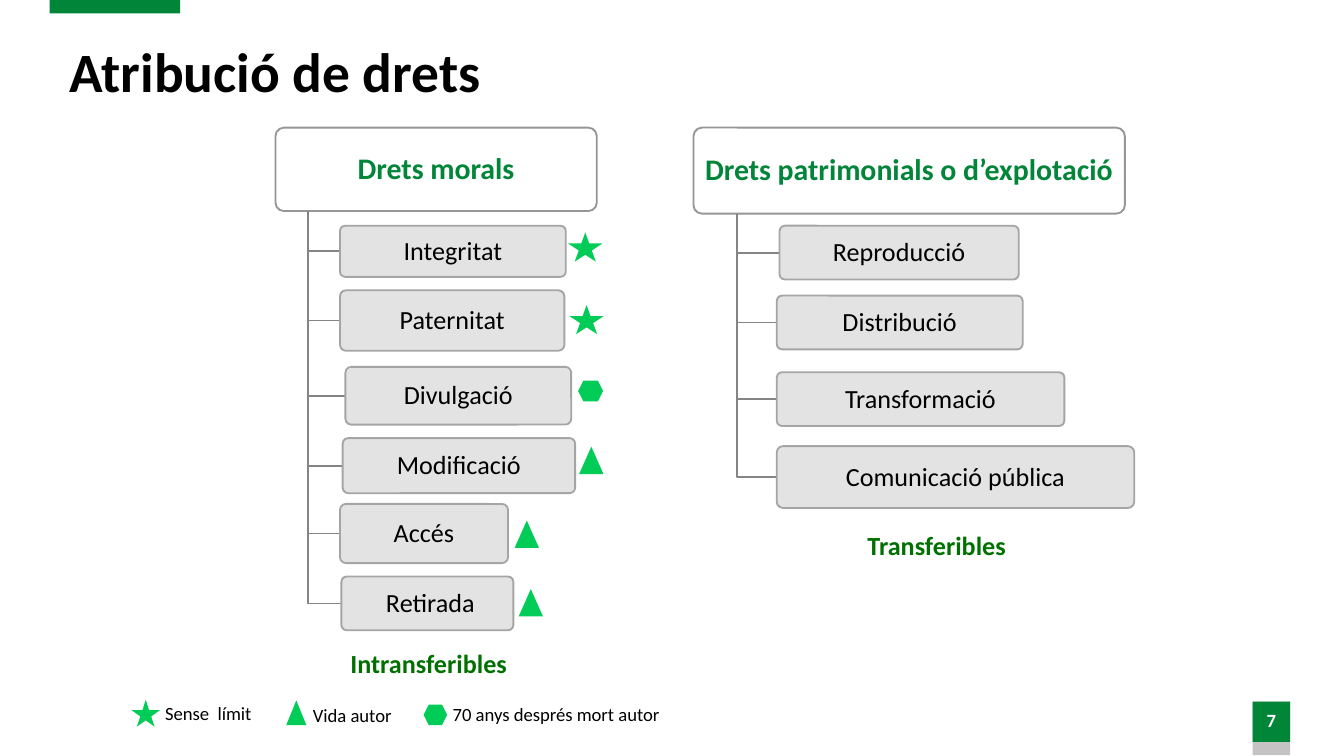
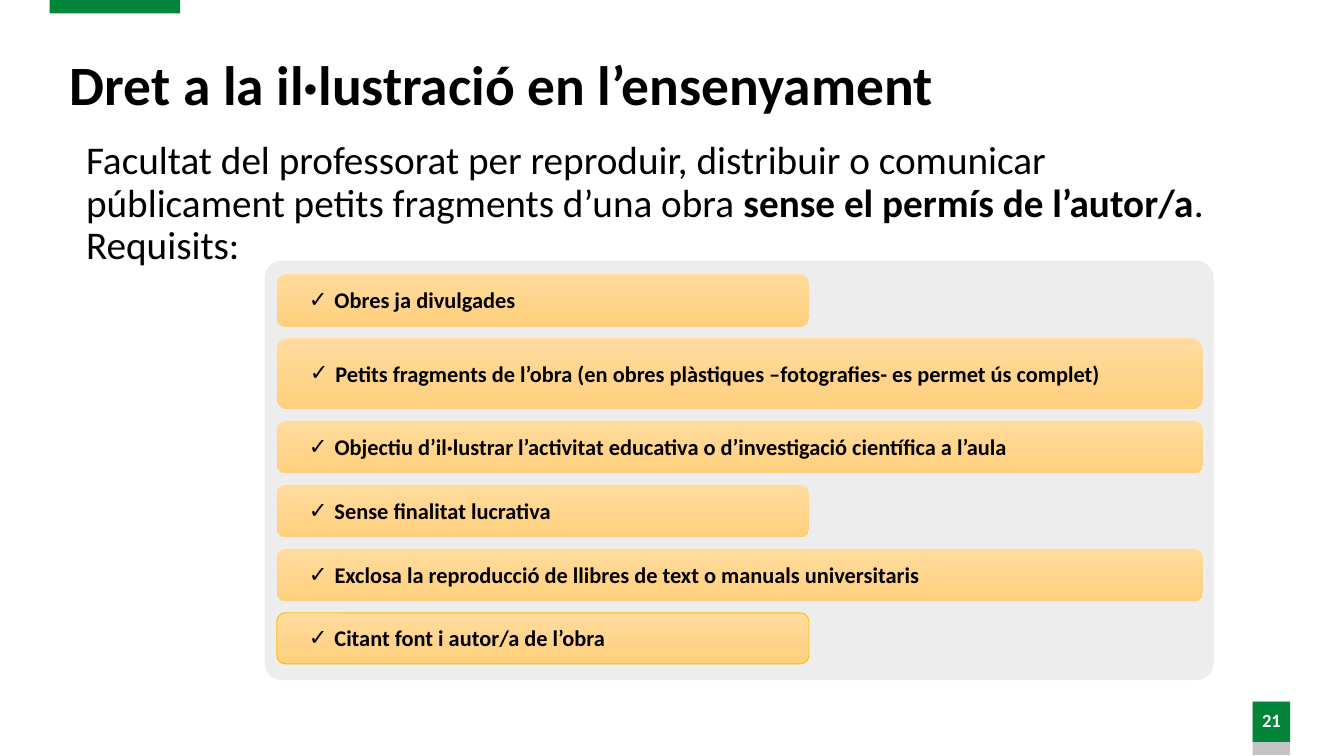
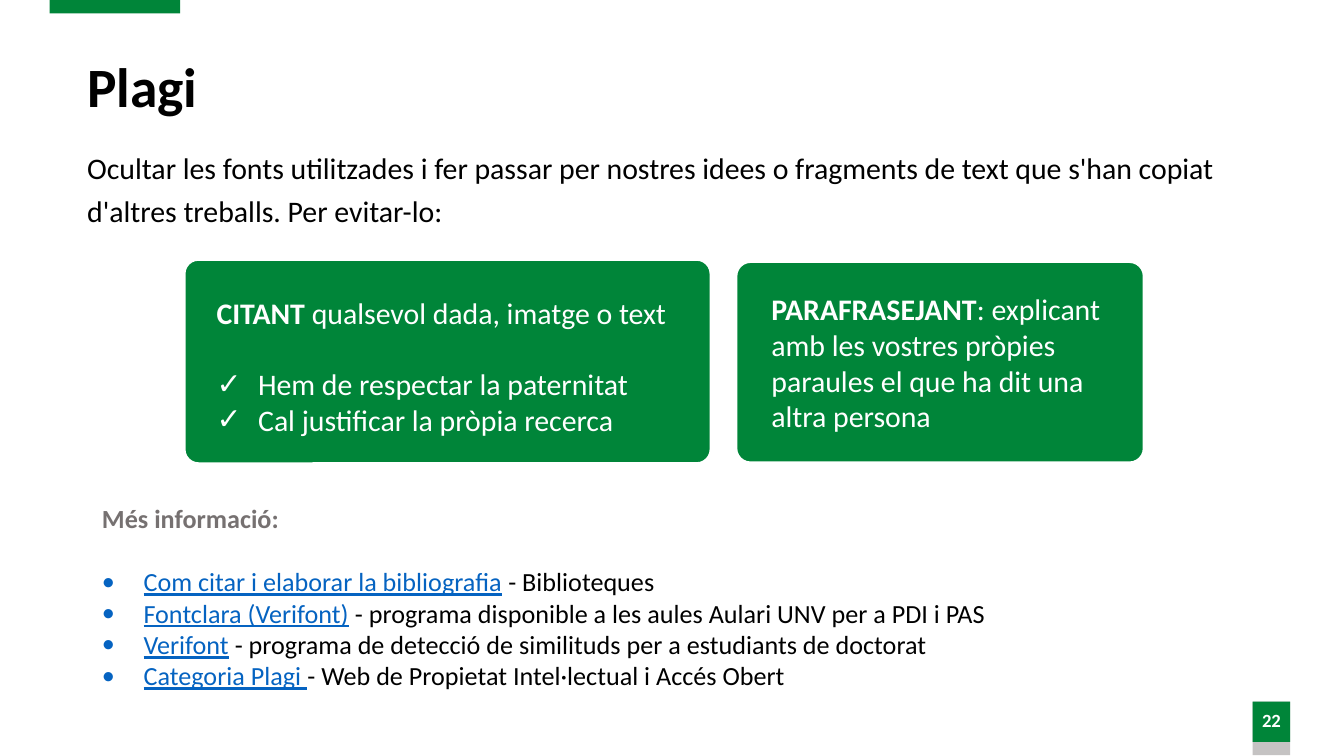
from typing import NamedTuple

from lxml.etree import SubElement
from pptx import Presentation
from pptx.dml.color import RGBColor
from pptx.enum.shapes import MSO_SHAPE as SHAPE
from pptx.enum.text import MSO_ANCHOR as ANCHOR, PP_ALIGN as ALIGN
from pptx.oxml.ns import qn
from pptx.util import Inches, Pt

FONT = "Calibri"
COLORS = {
    "green": "008539", "mark": "00CC57", "label": "007100", "band": "C5C3C3",
    "white": "FFFFFF", "black": "000000", "node": "E1E1E1", "node_line": "A5A5A5",
    "header_line": "969696", "branch": "848484", "panel": "EDEDED",
    "bar_top": "FFDB9E", "bar_bottom": "FFD07C", "bar_line": "FFC000",
    "muted": "767171", "link": "0563C1",
}
MARK_SIZES = {SHAPE.STAR_5_POINT: (0.21, 0.18), SHAPE.HEXAGON: (0.17, 0.14),
              SHAPE.ISOSCELES_TRIANGLE: (0.16, 0.18)}
STAR, HEXAGON, TRIANGLE = MARK_SIZES


class Box(NamedTuple):
    left: float
    top: float
    width: float
    height: float

    def emu(self):
        return [Inches(value) for value in self]

    def inner(self, dx, dy, width, height):
        return Box(self.left + dx, self.top + dy, width, height)


def rgb(name):
    return RGBColor.from_string(COLORS[name])


# Shared drawing helpers
def set_line(shape, color, width):
    if color:
        shape.line.color.rgb = rgb(color)
        shape.line.width = Pt(width)
    else:
        shape.line.fill.background()


def add_block(slide, kind, box, fill, line=None, line_width=1, radius=None):
    block = slide.shapes.add_shape(kind, *box.emu())
    block.shadow.inherit = False
    block.fill.solid()
    block.fill.fore_color.rgb = rgb(fill)
    set_line(block, line, line_width)
    if radius is not None:
        block.adjustments[0] = radius
    return block


def setup_frame(shape, anchor, margins=(0.1, 0.05, 0.1, 0.05)):
    frame = shape.text_frame
    frame.word_wrap = True
    frame.vertical_anchor = anchor
    (frame.margin_left, frame.margin_top,
     frame.margin_right, frame.margin_bottom) = [Inches(m) for m in margins]
    return frame


def write(paragraph, parts, size, color="black", bold=False, align=ALIGN.LEFT, spacing=None):
    """Parts is a string, or (text, style) pairs with bold, color or underline."""
    if isinstance(parts, str):
        parts = [(parts, {})]
    paragraph.alignment = align
    if spacing:
        paragraph.line_spacing = spacing
    for text, style in parts:
        run = paragraph.add_run()
        run.text = text
        run.font.name = FONT
        run.font.size = Pt(size)
        run.font.bold = style.get("bold", bold)
        run.font.underline = style.get("underline", False)
        run.font.color.rgb = rgb(style.get("color", color))


def add_bullet(paragraph, char, indent):
    properties = paragraph._p.get_or_add_pPr()
    properties.set("marL", str(Inches(indent)))
    properties.set("indent", str(-Inches(indent)))
    SubElement(properties, qn("a:buFont")).set("typeface", FONT)
    SubElement(properties, qn("a:buChar")).set("char", char)


def add_text(slide, box, parts, size, anchor=ANCHOR.TOP, **style):
    frame = setup_frame(slide.shapes.add_textbox(*box.emu()), anchor)
    write(frame.paragraphs[0], parts, size, **style)
    return frame


def add_mark(slide, kind, box):
    mark = add_block(slide, kind, box, "mark", "mark")
    SubElement(mark.line._get_or_add_ln(), qn("a:miter")).set("lim", "800000")


def start_slide(prs, title, title_box, number):
    slide = prs.slides.add_slide(prs.slide_layouts[6])
    # Top band and page number
    add_block(slide, SHAPE.RECTANGLE, Box(0.37, 0, 0.97, 0.1), "green")
    add_block(slide, SHAPE.RECTANGLE, Box(9.32, 5.22, 0.28, 0.4), "band")
    page = add_block(slide, SHAPE.RECTANGLE, Box(9.32, 5.22, 0.28, 0.3), "green")
    frame = setup_frame(page, ANCHOR.MIDDLE, (0, 0.04, 0, 0.04))
    write(frame.paragraphs[0], str(number), 10, "white", True, ALIGN.CENTER, 0.9)
    # Title
    add_text(slide, title_box, title, 29.7, ANCHOR.MIDDLE, bold=True, spacing=0.9)
    return slide


# Rights attribution
def add_tree_box(slide, box, text, size, fill, line, color="black", bold=False):
    block = add_block(slide, SHAPE.ROUNDED_RECTANGLE, box, fill, line, radius=0.1)
    frame = setup_frame(block, ANCHOR.MIDDLE, (0.04, 0.04, 0.04, 0.03))
    write(frame.paragraphs[0], text, size, color, bold, ALIGN.CENTER, 0.9)
    return block


def add_branch(slide, header, node):
    trunk = Inches(header.left + header.width / 10)
    middle = Inches(node.top + node.height / 2)
    builder = slide.shapes.build_freeform(trunk, Inches(header.top + header.height))
    builder.add_line_segments([(trunk, middle), (Inches(node.left), middle)], close=False)
    branch = builder.convert_to_shape()
    branch.shadow.inherit = False
    branch.fill.background()
    set_line(branch, "branch", 1)


def add_rights_tree(slide, header, heading, rights):
    add_tree_box(slide, header, heading, 16, "white", "header_line", "green", True)
    for right, offsets in rights:
        node = header.inner(*offsets)
        add_branch(slide, header, node)
        block = add_tree_box(slide, node, right, 14, "node", "node_line")
        color = block.fill._xPr.find(qn("a:solidFill"))[0]
        SubElement(color, qn("a:alpha")).set("val", "90000")


def add_duration_marks(slide, header, marks):
    for kind, dx, dy in marks:
        add_mark(slide, kind, header.inner(dx, dy, *MARK_SIZES[kind]))


def add_tree_label(slide, box, text):
    block = add_block(slide, SHAPE.ROUNDED_RECTANGLE, box, "white")
    frame = setup_frame(block, ANCHOR.MIDDLE)
    write(frame.paragraphs[0], text, 14, "label", True, ALIGN.CENTER)


def add_legend(slide, box):
    entries = [
        (STAR, (0, 0.06, 0.17, 0.16), "Sense  límit", (0.13, 0, 0.96, 0.28)),
        (TRIANGLE, (1.14, 0.06, 0.13, 0.16), "Vida autor", (1.23, 0.02, 0.96, 0.28)),
        (HEXAGON, (2.16, 0.08, 0.16, 0.14), "70 anys després mort autor",
         (2.27, 0.01, 2.14, 0.28)),
    ]
    for mark, mark_offsets, meaning, text_offsets in entries:
        add_mark(slide, mark, box.inner(*mark_offsets))
        add_text(slide, box.inner(*text_offsets), meaning, 10)


def rights_slide(prs):
    slide = start_slide(prs, "Atribució de drets", Box(0.42, 0.27, 9.11, 0.57), 7)
    moral = Box(2.05, 0.95, 2.39, 0.62)
    add_rights_tree(slide, moral, "Drets morals", [
        ("Integritat", (0.48, 0.73, 1.68, 0.38)),
        ("Paternitat", (0.48, 1.21, 1.67, 0.45)),
        ("Divulgació", (0.52, 1.78, 1.68, 0.43)),
        ("Modificació", (0.5, 2.31, 1.73, 0.41)),
        ("Accés", (0.48, 2.8, 1.25, 0.44)),
        (" Retirada", (0.49, 3.34, 1.28, 0.4)),
    ])
    add_rights_tree(slide, Box(5.16, 0.95, 3.21, 0.64), "Drets patrimonials o d’explotació", [
        ("Reproducció", (0.64, 0.73, 1.78, 0.4)),
        ("Distribució", (0.62, 1.25, 1.83, 0.4)),
        ("Transformació", (0.62, 1.82, 2.14, 0.4)),
        ("Comunicació pública", (0.62, 2.37, 2.66, 0.46)),
    ])
    add_duration_marks(slide, moral, [
        (STAR, 2.2, 0.8), (STAR, 2.21, 1.34), (HEXAGON, 2.26, 1.89),
        (TRIANGLE, 2.27, 2.39), (TRIANGLE, 1.79, 2.94), (TRIANGLE, 1.82, 3.45),
    ])
    add_tree_label(slide, Box(0.95, 4.76, 4.48, 0.35), "Intransferibles")
    add_legend(slide, Box(1, 5.17, 4.41, 0.3))
    add_tree_label(slide, Box(5.94, 3.89, 2.06, 0.33), "Transferibles")


# Teaching exception
def add_requirements(slide, panel, requirements):
    add_block(slide, SHAPE.ROUNDED_RECTANGLE, panel, "panel", radius=0.04)
    short, wide, pad_top, pad_bottom = 3.96, 6.89, 0.1, 0.12
    heights = [height for _, _, height in requirements]
    last = len(requirements) - 1
    gap = (panel.height - pad_top - pad_bottom - sum(heights)) / last
    dy = pad_top
    for index, (requirement, is_wide, height) in enumerate(requirements):
        bar_box = panel.inner(0.09, dy, wide if is_wide else short, height)
        bar = add_block(slide, SHAPE.ROUNDED_RECTANGLE, bar_box,
                        "bar_top", "bar_line" if index == last else None, 0.5)
        bar.fill.gradient()
        bar.fill.gradient_angle = 270
        for stop, color in zip(bar.fill.gradient_stops, ("bar_top", "bar_bottom")):
            stop.color.rgb = rgb(color)
        frame = setup_frame(bar, ANCHOR.MIDDLE, (0.22, 0.04, 0.15, 0.05))
        write(frame.paragraphs[0], requirement, 12, bold=True)
        add_bullet(frame.paragraphs[0], "✓", 0.19)
        dy += height + gap


def teaching_slide(prs):
    slide = start_slide(prs, "Dret a la il·lustració en l’ensenyament",
                        Box(0.42, 0.37, 9.11, 0.57), 21)
    body = add_text(slide, Box(0.55, 1.01, 8.65, 0.69), [
        ("Facultat del professorat per reproduir, distribuir o comunicar públicament "
         "petits fragments d’una obra ", {}),
        ("sense el permís de l’autor/a", {"bold": True}),
        (". Requisits:", {}),
    ], 21, spacing=0.9)
    body.margin_left = body.margin_right = Inches(0.09)
    body.margin_top = body.margin_bottom = Inches(0.04)
    add_requirements(slide, Box(1.97, 1.94, 7.06, 3.12), [
        ("Obres ja divulgades", False, 0.39),
        ("Petits fragments de l’obra (en obres plàstiques –fotografies- es permet ús complet)",
         True, 0.53),
        ("Objectiu d’il·lustrar l’activitat educativa o d’investigació científica a l’aula",
         True, 0.39),
        ("Sense finalitat lucrativa", False, 0.39),
        ("Exclosa la reproducció de llibres de text o manuals universitaris", True, 0.39),
        ("Citant font i autor/a de l’obra", False, 0.38),
    ])


# Plagiarism
def add_bullet_list(frame, items, char, size, color, gap):
    for index, item in enumerate(items):
        paragraph = frame.add_paragraph()
        write(paragraph, item, size, color)
        if index == 0:
            paragraph.space_before = Pt(gap)
        add_bullet(paragraph, char, 0.31)


def add_advice_card(slide, box, margins, line_width, keyword, advice, points=()):
    card = add_block(slide, SHAPE.ROUNDED_RECTANGLE, box, "green", "white", line_width, 0.07)
    frame = setup_frame(card, ANCHOR.MIDDLE, margins)
    write(frame.paragraphs[0], [(keyword, {"bold": True}), (advice, {})], 16, "white")
    add_bullet_list(frame, points, "✓", 16, "white", 19)


def add_more_info(slide, box, resources):
    frame = add_text(slide, box, "Més informació:", 14, color="muted", bold=True)
    link = {"color": "link", "underline": True}
    items = [[(name, link), (detail, {})] for name, detail in resources]
    add_bullet_list(frame, items, "•", 14, "black", 17)


def plagiarism_slide(prs):
    slide = start_slide(prs, "Plagi", Box(0.55, 0.38, 9.11, 0.57), 22)
    add_text(slide, Box(0.55, 1.01, 8.65, 0.82),
             "Ocultar les fonts utilitzades i fer passar per nostres idees o fragments de text "
             "que s'han copiat d'altres treballs. Per evitar-lo:", 16, spacing=1.2)
    add_advice_card(slide, Box(1.37, 1.93, 3.92, 1.52), (0.21, 0.16, 0.2, 0.09), 1.5,
                    "CITANT", " qualsevol dada, imatge o text",
                    ["Hem de respectar la paternitat", "Cal justificar la pròpia recerca"])
    add_advice_card(slide, Box(5.48, 1.95, 3.03, 1.49), (0.23, 0.05, 0.13, 0.05), 1,
                    "PARAFRASEJANT", ": explicant amb les vostres pròpies paraules "
                    "el que ha dit una altra persona")
    add_more_info(slide, Box(0.66, 3.69, 8.25, 1.51), [
        ("Com citar i elaborar la bibliografia", " - Biblioteques"),
        ("Fontclara (Verifont)", " - programa disponible a les aules Aulari UNV per a PDI i PAS"),
        ("Verifont", " - programa de detecció de similituds per a estudiants de doctorat"),
        ("Categoria Plagi ", "- Web de Propietat Intel·lectual i Accés Obert"),
    ])


def main():
    prs = Presentation()
    prs.slide_width = Inches(10)
    prs.slide_height = prs.slide_width * 9 // 16
    rights_slide(prs)
    teaching_slide(prs)
    plagiarism_slide(prs)
    prs.save("out.pptx")


if __name__ == "__main__":
    main()
